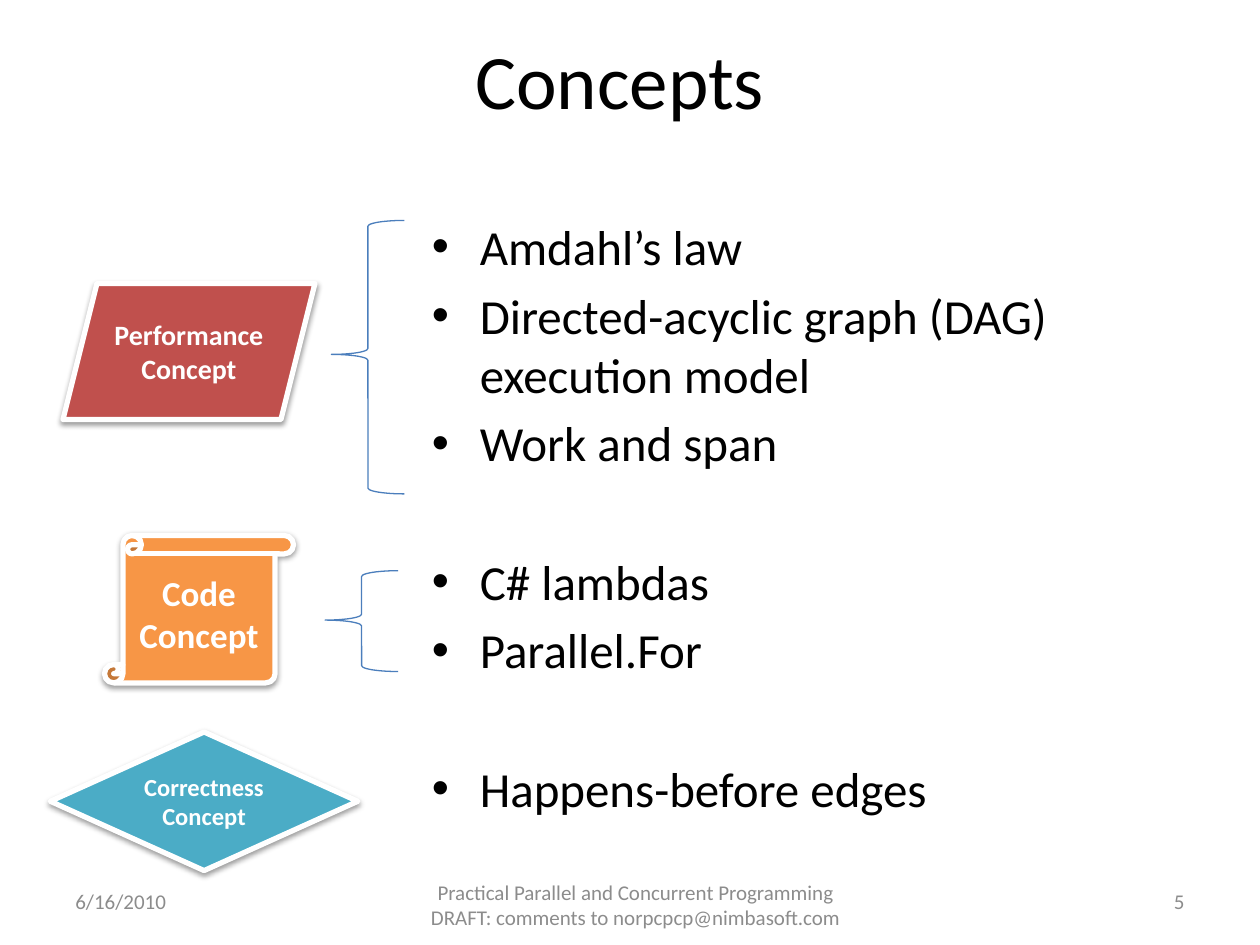
from dataclasses import dataclass

from lxml import etree
from pptx import Presentation
from pptx import util as u
from pptx.dml.color import RGBColor
from pptx.enum import shapes, text
from pptx.oxml import ns, parse_xml

KIND = shapes.MSO_SHAPE
ALIGN = text.PP_ALIGN
ANCHOR = text.MSO_ANCHOR


@dataclass(frozen=True)
class Theme:
    font: str = "Calibri"
    ink: str = "000000"
    muted: str = "8C8C8C"
    white: str = "FFFFFF"
    red: str = "C0504D"
    orange: str = "F79646"
    teal: str = "4BACC6"
    brace: str = "4B7EBC"
    title_size: float = 44
    body_size: float = 28
    footer_size: float = 12
    outline: float = 3
    brace_line: float = 0.75
    bullet_indent: float = 0.38
    bullet_gap: float = 5.6
    group_gap: float = 45.4


SHADOW = (
    f'<a:effectLst {ns.nsdecls("a")}>'
    '<a:outerShdw blurRad="40000" dist="20000" dir="5400000" rotWithShape="0">'
    '<a:srgbClr val="000000"><a:alpha val="38000"/></a:srgbClr>'
    "</a:outerShdw></a:effectLst>"
)


class SlideBuilder:
    def __init__(self, page, theme):
        self.page = page
        self.theme = theme

    def add_span(self, para, words, size, color, bold=False, align=ALIGN.LEFT):
        para.alignment = align
        span = para.add_run()
        span.text = words
        span.font.name = self.theme.font
        span.font.size = u.Pt(size)
        span.font.bold = bold
        span.font.color.rgb = RGBColor.from_string(color)

    def text_frame(self, area, anchor=ANCHOR.MIDDLE):
        box = self.page.shapes.add_textbox(*map(u.Inches, area))
        frame = box.text_frame
        frame.word_wrap = True
        frame.vertical_anchor = anchor
        return frame

    def label(self, area, words, size, color, align):
        para = self.text_frame(area).paragraphs[0]
        self.add_span(para, words, size, color, align=align)

    def bullets(self, area, groups):
        theme = self.theme
        frame = self.text_frame(area, ANCHOR.TOP)
        para = frame.paragraphs[0]
        for group_index, group in enumerate(groups):
            for index, words in enumerate(group):
                if group_index or index:
                    para = frame.add_paragraph()
                starts_group = group_index and not index
                gap = theme.group_gap if starts_group else theme.bullet_gap
                para.space_before = u.Pt(gap)
                self.add_span(para, words, theme.body_size, theme.ink)
                self.add_bullet(para)

    def add_bullet(self, para):
        properties = para._p.get_or_add_pPr()
        indent = u.Inches(self.theme.bullet_indent)
        properties.set("marL", str(indent))
        properties.set("indent", str(-indent))
        font = etree.SubElement(properties, ns.qn("a:buFont"))
        font.set("typeface", "Arial")
        etree.SubElement(properties, ns.qn("a:buChar")).set("char", "•")

    def shape(self, kind, area, line_color, line_width):
        box = self.page.shapes.add_shape(kind, *map(u.Inches, area))
        box.shadow.inherit = False
        box.line.color.rgb = RGBColor.from_string(line_color)
        box.line.width = u.Pt(line_width)
        return box

    def concept(self, kind, area, fill, name, size):
        theme = self.theme
        box = self.shape(kind, area, theme.white, theme.outline)
        box.fill.solid()
        box.fill.fore_color.rgb = RGBColor.from_string(fill)
        # Swap the empty effect list for a soft drop shadow
        properties = box._element.spPr
        properties.replace(properties.find(ns.qn("a:effectLst")), parse_xml(SHADOW))
        frame = box.text_frame
        frame.vertical_anchor = ANCHOR.MIDDLE
        for index, words in enumerate((name, "Concept")):
            para = frame.add_paragraph() if index else frame.paragraphs[0]
            self.add_span(para, words, size, theme.white, True, ALIGN.CENTER)

    def brace(self, area):
        box = self.shape(KIND.LEFT_BRACE, area, self.theme.brace, self.theme.brace_line)
        box.fill.background()
        box.adjustments[0] = 0.08
        box.adjustments[1] = 0.49


def main():
    deck = Presentation()
    deck.slide_width, deck.slide_height = u.Inches(10), u.Inches(7.5)
    theme = Theme()
    slide = SlideBuilder(deck.slides.add_slide(deck.slide_layouts[6]), theme)

    # Title
    slide.label((0.42, 0, 9, 1.25), "Concepts", theme.title_size, theme.ink, ALIGN.CENTER)

    # Topics, one group per kind of concept
    slide.bullets((3.33, 1.67, 6, 4.95), (
        ("Amdahl’s law", "Directed-acyclic graph (DAG) execution model", "Work and span"),
        ("C# lambdas", "Parallel.For"),
        ("Happens-before edges",),
    ))

    # Footer
    for area, words, align in (
        ((3.17, 7.03, 3.75, 0.3),
         "Practical Parallel and Concurrent Programming "
         "DRAFT: comments to norpcpcp@nimbasoft.com", ALIGN.CENTER),
        ((7.17, 6.95, 2.33, 0.4), "5", ALIGN.RIGHT),
        ((0.5, 6.95, 2.33, 0.4), "6/16/2010", ALIGN.LEFT),
    ):
        slide.label(area, words, theme.footer_size, theme.muted, align)

    # Concept markers
    for kind, area, fill, name, size in (
        (KIND.PARALLELOGRAM, (0.5, 2.25, 2, 1.08), theme.red, "Performance", 16),
        (KIND.VERTICAL_SCROLL, (0.83, 4.25, 1.5, 1.17), theme.orange, "Code", 20),
        (KIND.FLOWCHART_DECISION, (0.4, 5.81, 2.44, 1.1), theme.teal, "Correctness", 14),
    ):
        slide.concept(kind, area, fill, name, size)

    # Braces joining markers to their topics
    for area in ((2.63, 1.75, 0.58, 2.17), (2.58, 4.53, 0.58, 0.8)):
        slide.brace(area)

    deck.save("out.pptx")


if __name__ == "__main__":
    main()
